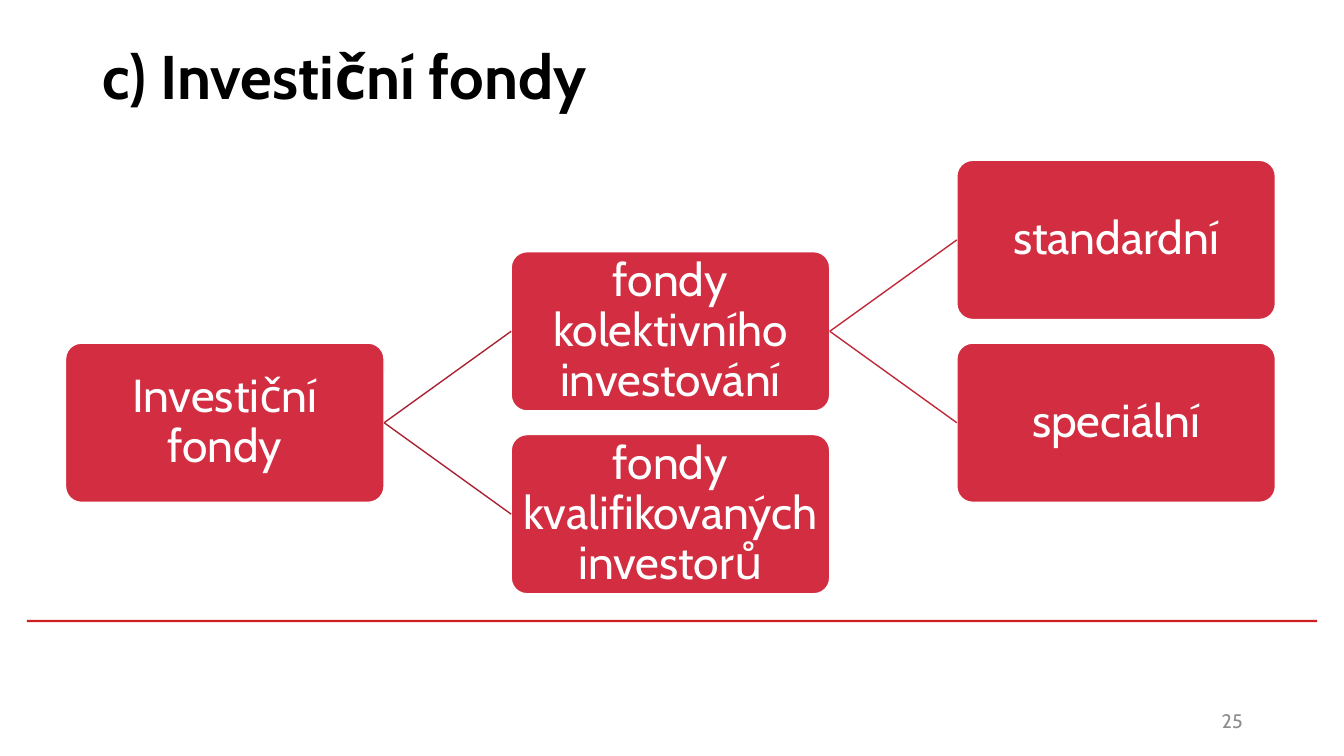
from dataclasses import dataclass

from lxml import etree
from pptx import Presentation
from pptx.dml.color import RGBColor
from pptx.enum.shapes import MSO_CONNECTOR, MSO_SHAPE
from pptx.enum.text import MSO_ANCHOR, MSO_AUTO_SIZE, PP_ALIGN
from pptx.oxml.ns import qn
from pptx.util import Inches, Pt

ROUND, RECT = MSO_SHAPE.ROUNDED_RECTANGLE, MSO_SHAPE.RECTANGLE
STRAIGHT = MSO_CONNECTOR.STRAIGHT
MIDDLE, NO_FIT = MSO_ANCHOR.MIDDLE, MSO_AUTO_SIZE.NONE
LEFT, CENTER, RIGHT = PP_ALIGN.LEFT, PP_ALIGN.CENTER, PP_ALIGN.RIGHT
LEFT_SITE, RIGHT_SITE = 1, 3


@dataclass(frozen=True)
class Theme:
    font: str = "Cabin"
    white: str = "FFFFFF"
    black: str = "000000"
    gray: str = "8C8C8C"
    box: str = "D22D40"
    rule: str = "CD1F21"
    links: tuple[str, ...] = ("A82433", "BF293A")  # by column of the parent
    title: int = 44
    label: int = 33
    number: int = 14


@dataclass(frozen=True)
class Grid:
    left: float = 0.65
    top: float = 1.59
    col: float = 4.42
    row: float = 0.907  # half the step between stacked boxes
    width: float = 3.16
    height: float = 1.58

    def place(self, col: int, row: int) -> list[int]:
        spot = (self.left + col * self.col, self.top + row * self.row,
                self.width, self.height)
        return [Inches(size) for size in spot]


@dataclass(frozen=True)
class Node:
    text: str
    col: int
    row: int
    parent: str = ""


THEME, GRID = Theme(), Grid()
FUNDS, JOINT = "Investiční fondy", "fondy kolektivního investování"
NODES = (
    Node(FUNDS, 0, 2),
    Node(JOINT, 1, 1, FUNDS),
    Node("standardní", 2, 0, JOINT),
    Node("speciální", 2, 2, JOINT),
    Node("fondy kvalifikovaných investorů", 1, 3, FUNDS),
)


def write(shape, text: str, size: int, color: str, align, inset: float = 0.1,
          spacing: float = 1.0, bold: bool = False) -> None:
    frame = shape.text_frame
    frame.text = text
    pad = Inches(inset)
    format = {"word_wrap": True, "auto_size": NO_FIT, "vertical_anchor": MIDDLE,
              "margin_left": pad, "margin_right": pad}
    for key, value in format.items():
        setattr(frame, key, value)
    line = frame.paragraphs[0]
    line.alignment, line.line_spacing = align, spacing
    font = line.runs[0].font
    for key, value in {"name": THEME.font, "size": Pt(size), "bold": bold}.items():
        setattr(font, key, value)
    font.color.rgb = RGBColor.from_string(color)


def block(slide, kind, spot: list[int], fill: str):
    shape = slide.shapes.add_shape(kind, *spot)
    shape.shadow.inherit = False
    shape.fill.solid()
    shape.fill.fore_color.rgb = RGBColor.from_string(fill)
    shape.line.fill.background()
    return shape


def add_node(slide, node: Node):
    box = block(slide, ROUND, GRID.place(node.col, node.row), THEME.box)
    box.adjustments[0] = 0.1
    box.line.color.rgb = RGBColor.from_string(THEME.white)
    box.line.width = Pt(1)
    write(box, node.text, THEME.label, THEME.white, CENTER, 0.07, 0.9)
    return box


def link(slide, start, end, color: str) -> None:
    line = slide.shapes.add_connector(STRAIGHT, 0, 0, 0, 0)
    line.begin_connect(start, RIGHT_SITE)
    line.end_connect(end, LEFT_SITE)
    line.line.color.rgb = RGBColor.from_string(color)
    line.line.width = Pt(1)
    etree.SubElement(line._element.spPr, qn("a:effectLst"))


def main() -> None:
    deck = Presentation()
    deck.slide_width, deck.slide_height = Inches(13.33), Inches(7.5)
    wide, high = deck.slide_width, deck.slide_height
    slide = deck.slides.add_slide(deck.slide_layouts[5])

    def area(left: float, top: float, width: float, height: float) -> list[int]:
        return [int(wide * left), int(high * top),
                int(wide * width), int(high * height)]

    # Footer rule
    block(slide, RECT, area(0.02, 0.82, 0.96, 0.003), THEME.rule)

    # Title
    title = slide.shapes.title
    spot = area(0.069, 0.003, 0.863, 0.193)
    for key, value in zip(("left", "top", "width", "height"), spot):
        setattr(title, key, value)
    write(title, "c) Investiční fondy", THEME.title, THEME.black, LEFT, bold=True)

    # Slide number
    number = slide.shapes.add_textbox(*area(0.707, 0.927, 0.225, 0.053))
    write(number, "25", THEME.number, THEME.gray, RIGHT)

    # Tree of funds
    boxes = {node.text: add_node(slide, node) for node in NODES}
    for node in NODES:
        if node.parent:
            link(slide, boxes[node.parent], boxes[node.text],
                 THEME.links[node.col - 1])

    deck.save("out.pptx")


if __name__ == "__main__":
    main()
